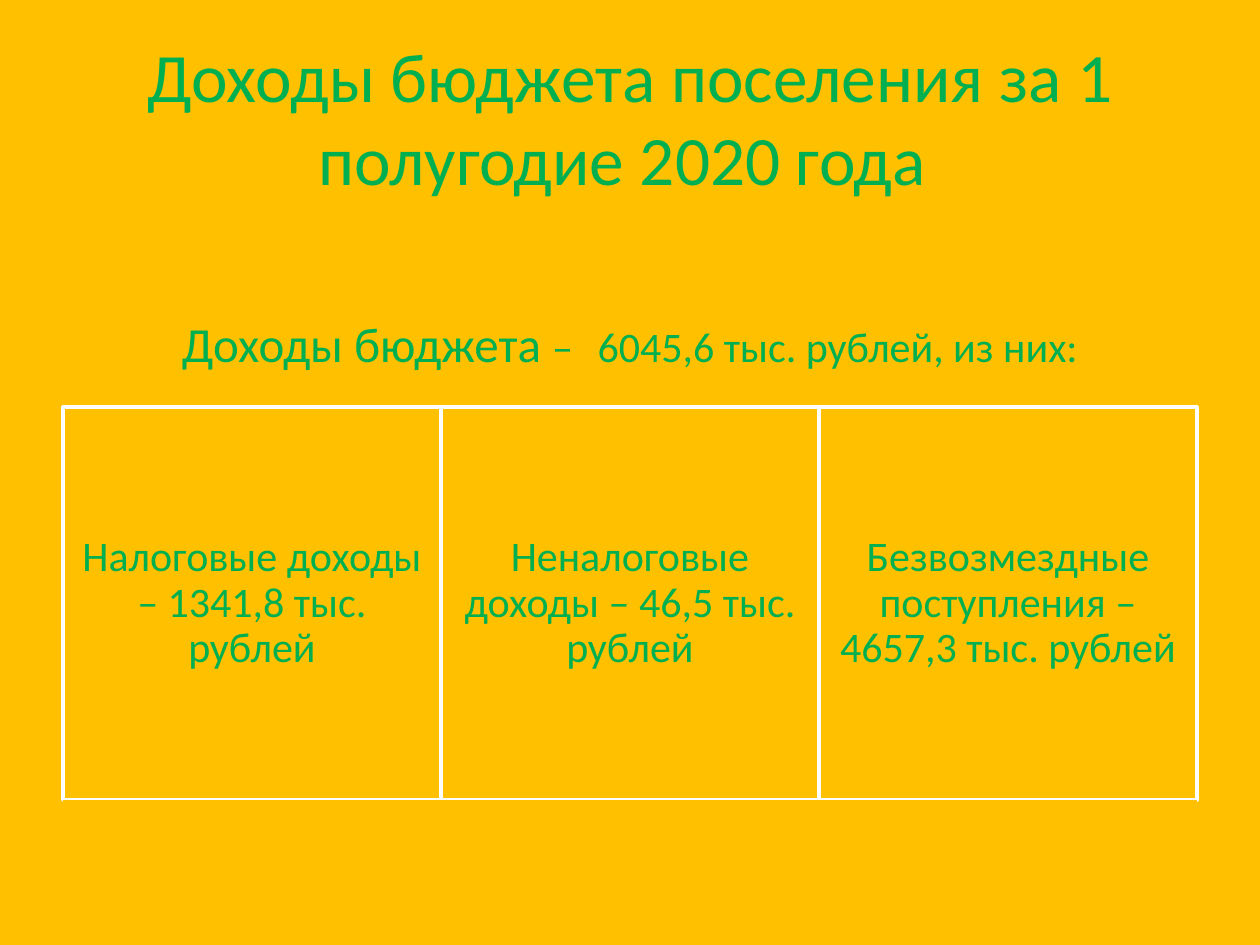
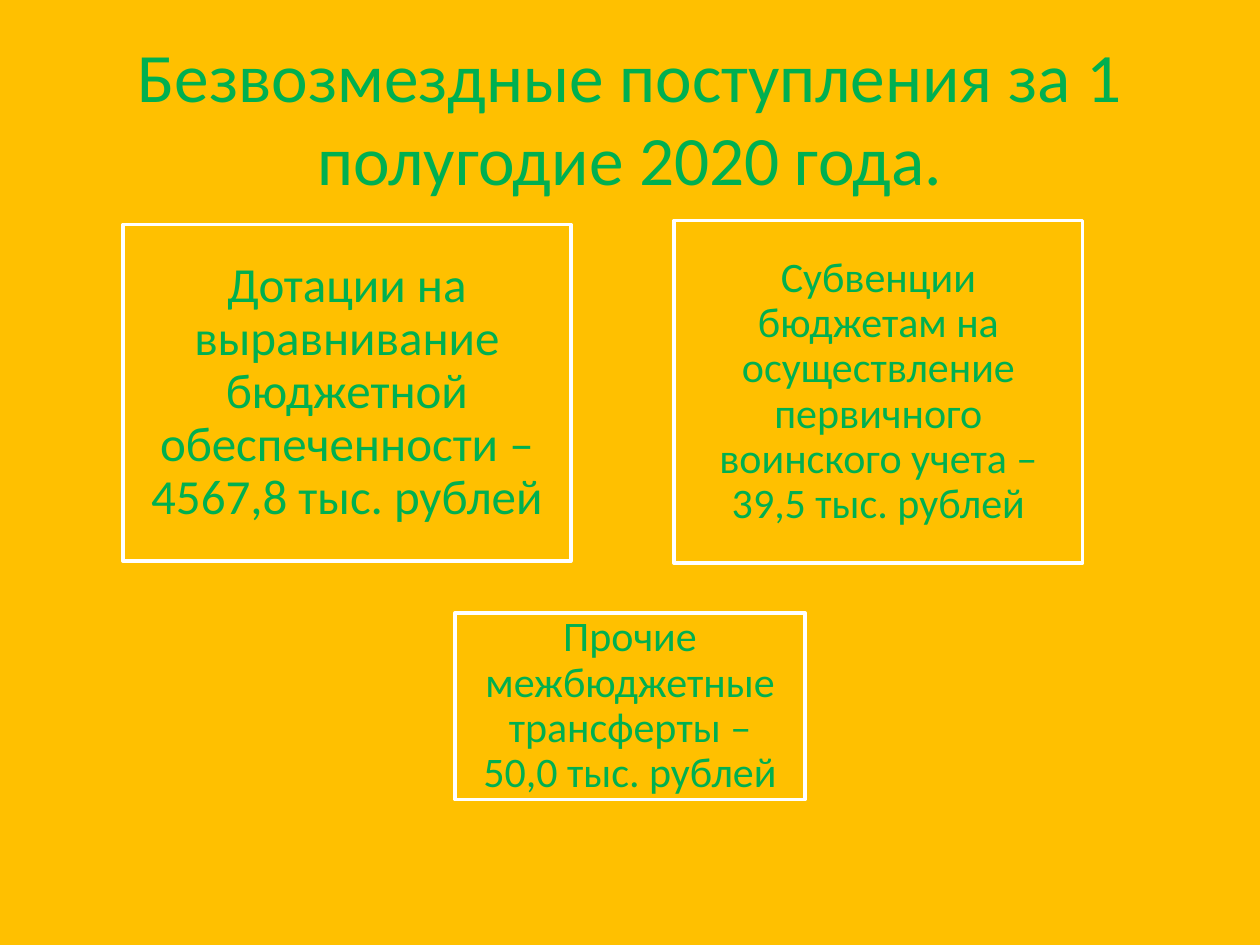
from dataclasses import dataclass

from pptx import Presentation
from pptx.dml.color import RGBColor
from pptx.enum.shapes import MSO_SHAPE as SHAPE
from pptx.enum.text import MSO_ANCHOR as ANCHOR, PP_ALIGN as ALIGN
from pptx.util import Pt

INCOME = {
    "title": "Доходы бюджета поселения за 1 полугодие 2020 года ",
    # text and size of each part of the heading
    "heading": [
        ("Доходы бюджета ", 28),
        ("–", 24),
        (" ", 62),
        ("6045,6 тыс. рублей, из них:", 24),
    ],
    "sources": [
        "Налоговые доходы – 1341,8 тыс. рублей",
        "Неналоговые доходы – 46,5 тыс. рублей",
        "Безвозмездные поступления – 4657,3 тыс. рублей",
    ],
}
TRANSFERS = {
    "title": "Безвозмездные поступления за 1 полугодие 2020 года.",
    # text, size, box (left, top, width, height)
    "cards": [
        ("Дотации на выравнивание бюджетной обеспеченности – 4567,8 тыс. рублей",
         28, (70.3, 128.3, 255.9, 192.4)),
        ("Субвенции бюджетам на осуществление первичного воинского учета – "
         "39,5 тыс. рублей",
         24, (385.2, 126, 233.5, 195.8)),
        ("Прочие межбюджетные трансферты – 50,0 тыс. рублей",
         24, (259.9, 350.2, 200.2, 106.6)),
    ],
}


@dataclass(frozen=True)
class Theme:
    back: RGBColor = RGBColor(0xFF, 0xC0, 0x00)
    text: RGBColor = RGBColor(0x00, 0xB0, 0x50)
    line: RGBColor = RGBColor(0xFF, 0xFF, 0xFF)
    font: str = "Calibri"
    title_size: float = 39.6
    card_size: float = 24
    line_width: float = 2


THEME = Theme()
SLIDE_W, SLIDE_H = 720, 540
MARGIN = 36
CONTENT_W = SLIDE_W - 2 * MARGIN
CARDS_TOP, CARDS_H = 232.6, 224.6
BAND_H = 25


def write(sp, runs, inset_x=7.2, inset_y=7.2, spacing=0.9):
    """Put one centred paragraph of (text, size) runs into a shape."""
    tf = sp.text_frame
    frame_format = {
        "word_wrap": True,
        "vertical_anchor": ANCHOR.MIDDLE,
        "margin_left": Pt(inset_x),
        "margin_right": Pt(inset_x),
        "margin_top": Pt(inset_y),
        "margin_bottom": Pt(inset_y),
    }
    for name, value in frame_format.items():
        setattr(tf, name, value)
    p = tf.paragraphs[0]
    p.alignment = ALIGN.CENTER
    p.line_spacing = spacing
    for text, size in runs:
        r = p.add_run()
        r.text = text
        for name, value in {"name": THEME.font, "size": Pt(size)}.items():
            setattr(r.font, name, value)
        r.font.color.rgb = THEME.text


def add_text(s, box, runs, **layout):
    write(s.shapes.add_textbox(*map(Pt, box)), runs, **layout)


def add_rect(s, box, outlined=True):
    sp = s.shapes.add_shape(SHAPE.RECTANGLE, *map(Pt, box))
    sp.shadow.inherit = False
    sp.fill.solid()
    sp.fill.fore_color.rgb = THEME.back
    if outlined:
        sp.line.color.rgb = THEME.line
        sp.line.width = Pt(THEME.line_width)
    else:
        sp.line.fill.background()
    return sp


def add_card(s, box, text, size=THEME.card_size):
    write(add_rect(s, box), [(text, size)])


def add_slide(prs, title):
    s = prs.slides.add_slide(prs.slide_layouts[6])
    s.background.fill.solid()
    s.background.fill.fore_color.rgb = THEME.back
    add_text(s, (MARGIN, 21.6, CONTENT_W, 90), [(title, THEME.title_size)],
             inset_y=3.6, spacing=1.0)
    return s


def build_income(prs):
    s = add_slide(prs, INCOME["title"])
    add_text(s, (MARGIN, 133.9, CONTENT_W, 106.6), INCOME["heading"],
             inset_x=8.6, inset_y=8.6)
    card_w = CONTENT_W / len(INCOME["sources"])
    for i, text in enumerate(INCOME["sources"]):
        add_card(s, (MARGIN + i * card_w, CARDS_TOP, card_w, CARDS_H), text)
    add_rect(s, (MARGIN, CARDS_TOP + CARDS_H, CONTENT_W, BAND_H), outlined=False)


def build_transfers(prs):
    s = add_slide(prs, TRANSFERS["title"])
    for text, size, box in TRANSFERS["cards"]:
        add_card(s, box, text, size)


def main():
    prs = Presentation()
    prs.slide_width, prs.slide_height = Pt(SLIDE_W), Pt(SLIDE_H)
    build_income(prs)
    build_transfers(prs)
    prs.save("out.pptx")


if __name__ == "__main__":
    main()
